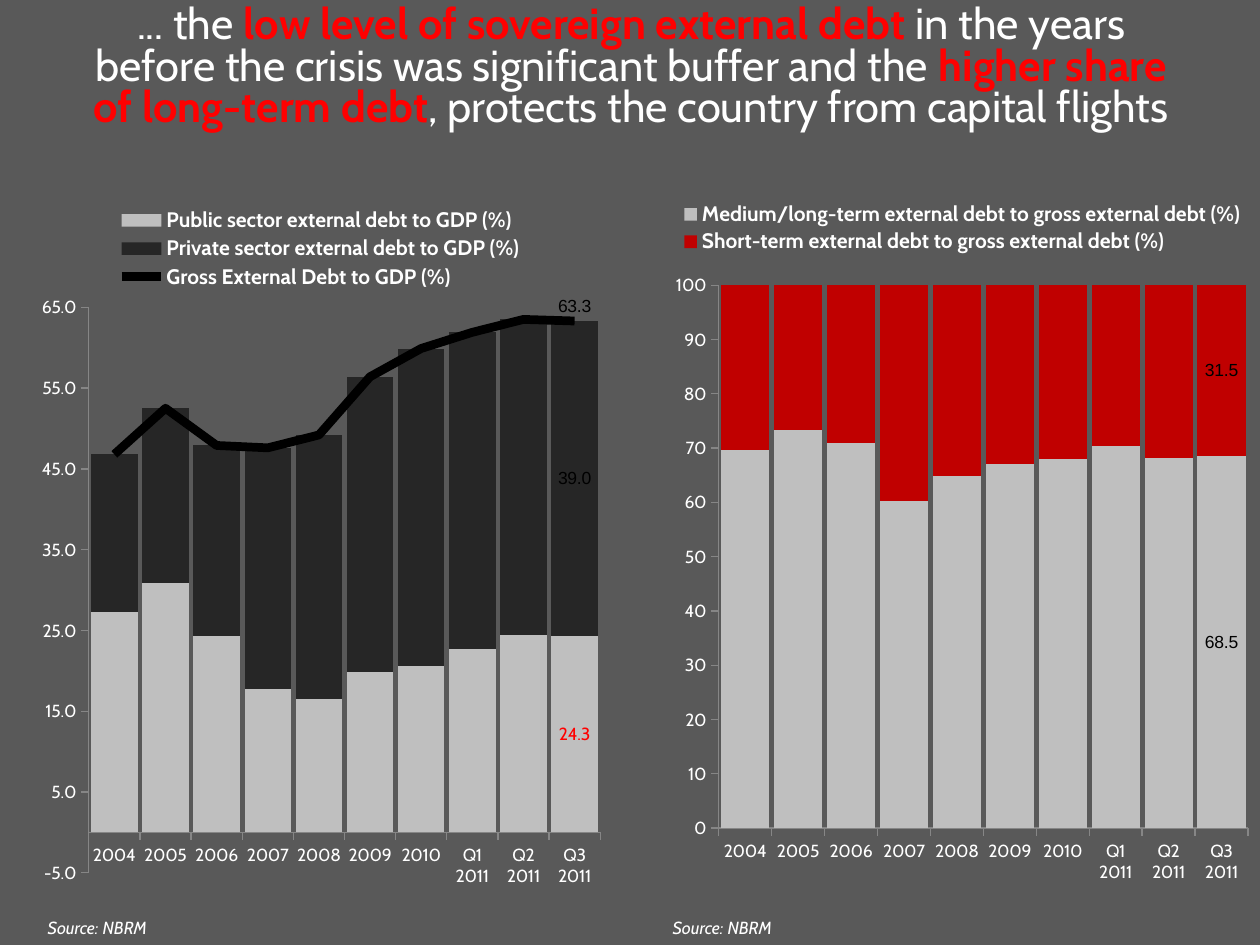
from pptx import Presentation
from pptx.chart.data import CategoryChartData
from pptx.dml.color import RGBColor
from pptx.enum.chart import XL_CHART_TYPE, XL_LABEL_POSITION, XL_LEGEND_POSITION, XL_TICK_MARK
from pptx.enum.text import MSO_ANCHOR, MSO_AUTO_SIZE, PP_ALIGN
from pptx.oxml import parse_xml
from pptx.oxml.ns import nsdecls
from pptx.util import Inches, Pt

FONT = "Cabin"
WHITE = RGBColor(0xFF, 0xFF, 0xFF)
BLACK = RGBColor(0, 0, 0)
RED = RGBColor(0xFF, 0, 0)
CRIMSON = RGBColor(0xC0, 0, 0)
LIGHT = RGBColor(0xBF, 0xBF, 0xBF)
DARK = RGBColor(0x26, 0x26, 0x26)
GREY = RGBColor(0x86, 0x86, 0x86)
BACK = RGBColor(0x59, 0x59, 0x59)

TITLE = [
    ("... the ", False),
    ("low level of sovereign external debt ", True),
    ("in the years before the crisis was significant buffer and the ", False),
    ("higher share of long-term debt", True),
    (", protects the country from capital flights", False),
]
DATES = [str(year) for year in range(2004, 2011)] + [f"Q{q} 2011" for q in (1, 2, 3)]
LAST = len(DATES) - 1
SECTOR = {
    "Public sector external debt to GDP (%)":
        (27.3, 30.9, 24.3, 17.7, 16.5, 19.8, 20.6, 22.7, 24.4, 24.3),
    "Private sector external debt to GDP (%)":
        (19.6, 21.6, 23.6, 29.9, 32.7, 36.6, 39.2, 39.2, 39.1, 39.0),
    "Gross External Debt to GDP (%)":
        (46.8, 52.5, 47.9, 47.6, 49.2, 56.4, 59.9, 61.9, 63.5, 63.3),
}
TERM = {
    "Medium/long-term external debt to gross external debt (%)":
        (69.7, 73.3, 71.0, 60.2, 64.8, 67.1, 67.9, 70.4, 68.1, 68.5),
    "Short-term external debt to gross external debt (%)":
        (30.3, 26.7, 29.0, 39.8, 35.2, 32.9, 32.1, 29.6, 31.9, 31.5),
}


def style(font, size, color=WHITE, name=FONT, bold=False, italic=False):
    font.size, font.name = Pt(size), name
    font.bold, font.italic = bold, italic
    font.color.rgb = color


def add_title(slide, left, top, width, height):
    title = slide.shapes.title
    title.left, title.top, title.width, title.height = left, top, width, height
    frame = title.text_frame
    frame.word_wrap = True
    frame.auto_size = MSO_AUTO_SIZE.NONE
    frame.vertical_anchor = MSO_ANCHOR.TOP
    para = frame.paragraphs[0]
    para.alignment = PP_ALIGN.CENTER
    para.line_spacing = 0.8
    for text, strong in TITLE:
        run = para.add_run()
        run.text = text
        style(run.font, 24.8, RED if strong else WHITE, bold=strong)


def add_source(slide, left, top):
    box = slide.shapes.add_textbox(left, top, Inches(1.57), Inches(0.27))
    frame = box.text_frame
    frame.word_wrap = True
    frame.text = "Source: NBRM"
    style(frame.paragraphs[0].runs[0].font, 10, italic=True)


def make_layout(area, inner=False):
    """Return a manual layout; area holds fractions of the chart."""
    target = '<c:layoutTarget val="inner"/>' if inner else ""
    sizes = "".join(f'<c:{tag} val="{val}"/>' for tag, val in zip("xywh", area))
    return parse_xml(
        f'<c:layout {nsdecls("c")}><c:manualLayout>{target}<c:xMode val="edge"/>'
        f'<c:yMode val="edge"/>{sizes}</c:manualLayout></c:layout>')


def place_parts(chart, plot, legend):
    root = chart.element
    for old in root.xpath("c:chart/c:plotArea/c:layout | c:chart/c:legend/c:layout"):
        old.getparent().remove(old)
    root.xpath("c:chart/c:plotArea")[0].insert(0, make_layout(plot, True))
    root.xpath("c:chart/c:legend/c:legendPos")[0].addnext(make_layout(legend))


def style_axes(chart, low, high, step, form):
    value, cat = chart.value_axis, chart.category_axis
    value.minimum_scale, value.maximum_scale, value.major_unit = low, high, step
    value.has_major_gridlines = False
    value.tick_labels.number_format = form
    value.tick_labels.number_format_is_linked = False
    for axis in (value, cat):
        axis.major_tick_mark = XL_TICK_MARK.OUTSIDE
        axis.format.line.color.rgb = GREY
        axis.format.line.width = Pt(0.75)


def label_last(series, color=BLACK, name="Arial", spot=XL_LABEL_POSITION.CENTER):
    label = series.points[LAST].data_label
    style(label.font, 10, color, name)
    label.position = spot
    series.data_labels.show_value = False


def add_stack(slide, box, data, colors, spot):
    table = CategoryChartData(number_format="0.0")
    table.categories = DATES
    for name, values in data.items():
        table.add_series(name, values)
    chart = slide.shapes.add_chart(XL_CHART_TYPE.COLUMN_STACKED, *box, table).chart
    chart.has_title = False
    style(chart.font, 10)
    chart.has_legend = True
    chart.legend.position = spot
    chart.legend.include_in_layout = False
    style(chart.legend.font, 12, bold=True)
    plot = chart.plots[0]
    plot.gap_width, plot.overlap = 10, 100
    plot.vary_by_categories = False
    for series, color in zip(plot.series, colors):
        series.format.fill.solid()
        series.format.fill.fore_color.rgb = color
    return chart


def split_line(chart):
    """Turn the last column series into a line on the same axes."""
    bars = chart.element.xpath("c:chart/c:plotArea/c:barChart")[0]
    ser = bars.xpath("c:ser")[-1]
    for flag in ser.xpath("c:invertIfNegative"):
        ser.remove(flag)
    axes = "".join(f'<c:axId val="{val}"/>' for val in bars.xpath("c:axId/@val"))
    line = parse_xml(
        f'<c:lineChart {nsdecls("c")}><c:grouping val="standard"/>'
        f'<c:varyColors val="0"/><c:marker val="1"/>{axes}</c:lineChart>')
    line.insert(2, ser)
    bars.addnext(line)
    series = chart.plots[1].series[0]
    series.smooth = False
    series.marker.style = None
    ser.get_or_add_marker().get_or_add_symbol().set("val", "none")
    series.format.line.color.rgb = BLACK
    series.format.line.width = Pt(5)
    return series


def add_sectors(slide, *box):
    chart = add_stack(slide, box, SECTOR, (LIGHT, DARK), XL_LEGEND_POSITION.BOTTOM)
    style_axes(chart, -5, 65, 10, "0.0")
    place_parts(chart, (0.09, 0.18, 0.86, 0.77), (0.13, 0.04, 0.7, 0.12))
    gross = split_line(chart)
    public, private = chart.plots[0].series
    label_last(public, RED, FONT)
    label_last(private)
    label_last(gross, spot=XL_LABEL_POSITION.ABOVE)


def add_terms(slide, *box):
    chart = add_stack(slide, box, TERM, (LIGHT, CRIMSON), XL_LEGEND_POSITION.TOP)
    style_axes(chart, 0, 100, 10, "0")
    place_parts(chart, (0.09, 0.14, 0.89, 0.76), (0.02, 0.02, 0.96, 0.08))
    for series in chart.plots[0].series:
        label_last(series)


def main():
    deck = Presentation()
    deck.slide_width, deck.slide_height = Inches(10), Inches(7.5)
    slide = deck.slides.add_slide(deck.slide_layouts[5])
    slide.background.fill.solid()
    slide.background.fill.fore_color.rgb = BACK
    add_sectors(slide, Inches(0.28), Inches(1.39), Inches(4.72), Inches(5.83))
    add_terms(slide, Inches(5.28), Inches(1.47), Inches(4.72), Inches(5.67))
    add_title(slide, Inches(0.51), Inches(0), Inches(9), Inches(1.47))
    for left in (0.28, 5.24):
        add_source(slide, Inches(left), Inches(7.23))
    deck.save("out.pptx")


if __name__ == "__main__":
    main()
